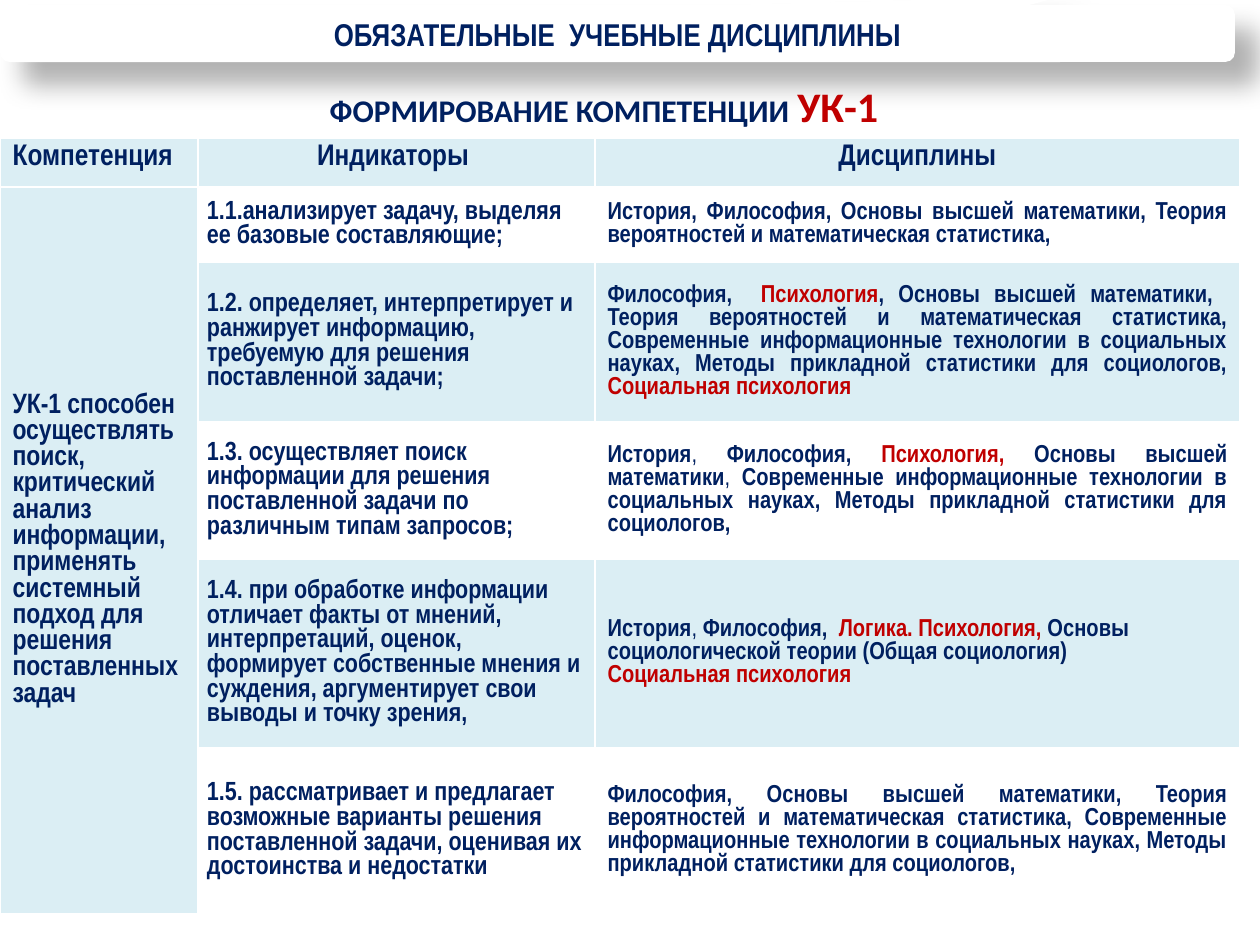
from dataclasses import dataclass

from lxml.etree import SubElement
from pptx import Presentation
from pptx.dml.color import RGBColor
from pptx.enum.shapes import MSO_SHAPE
from pptx.enum.text import MSO_ANCHOR, MSO_AUTO_SIZE, PP_ALIGN
from pptx.oxml.ns import qn
from pptx.util import Emu, Pt

LEFT, CENTER, JUSTIFY = PP_ALIGN.LEFT, PP_ALIGN.CENTER, PP_ALIGN.JUSTIFY


@dataclass(frozen=True)
class Theme:
    navy: str = "002060"
    red: str = "C00000"
    tint: str = "DBEEF4"
    white: str = "FFFFFF"
    black: str = "000000"
    narrow: str = "Arial Narrow"
    sans: str = "Calibri"
    title: int = 18
    space: int = 20
    code: int = 24
    header: int = 17
    competence: int = 16
    indicator: int = 15
    discipline: int = 14


THEME = Theme()
RED = {"color": THEME.red}
PLAIN = {"bold": False}

HEADERS = [("Компетенция", LEFT), ("Индикаторы ", CENTER), ("Дисциплины", CENTER)]
COMPETENCE = ("УК-1 способен осуществлять поиск, критический анализ информации, "
              "применять системный подход для решения поставленных задач")
MATH = "Основы высшей математики"
STATISTICS = "Теория вероятностей и математическая статистика, "
METHODS = ("Современные информационные технологии в социальных науках, "
           "Методы прикладной статистики для социологов, ")
SOCIAL = ("Социальная психология", RED)

# Each row: indicator, then its discipline paragraphs as (alignment, spans).
ROWS = [
    ("1.1.анализирует задачу, выделяя ее базовые составляющие;",
     [(JUSTIFY, [f"История, Философия, {MATH}, {STATISTICS.rstrip()}"])]),
    ("1.2. определяет, интерпретирует и ранжирует информацию, требуемую для решения "
     "поставленной задачи;",
     [(JUSTIFY, ["Философия,  ", ("Психология", RED),
                 f", {MATH},  {STATISTICS}{METHODS}", SOCIAL])]),
    ("1.3. осуществляет поиск информации для решения поставленной задачи по различным "
     "типам запросов; ",
     [(JUSTIFY, ["История", (", ", PLAIN), "Философия, ", ("Психология, ", RED),
                 MATH, (", ", PLAIN), METHODS])]),
    ("1.4. при обработке информации отличает факты от мнений, интерпретаций, оценок, "
     "формирует собственные мнения и суждения, аргументирует свои выводы и точку зрения,",
     [(LEFT, ["История", (", ", PLAIN), "Философия,  ", ("Логика. Психология, ", RED),
              "Основы социологической теории (Общая социология)"]),
      (JUSTIFY, [SOCIAL])]),
    ("1.5. рассматривает и предлагает возможные варианты решения поставленной задачи, "
     "оценивая их достоинства и недостатки",
     [(JUSTIFY, [f"Философия, {MATH}, {STATISTICS}{METHODS}"])]),
]
COLUMN_WIDTHS = [198, 397, 645]
ROW_HEIGHTS = [49, 75, 160, 137, 189, 166]


def px(length):
    return Emu(round(length * 914400 / 126))


def set_all(target, values):
    for name, value in values.items():
        setattr(target, name, value)


def write(frame, paragraphs, size, font=THEME.narrow):
    """Fill a text frame from (alignment, spans); a span is text or (text, changes)."""
    for index, (alignment, spans) in enumerate(paragraphs):
        para = frame.add_paragraph() if index else frame.paragraphs[0]
        para.alignment = alignment
        for part in spans:
            text, changes = (part, {}) if isinstance(part, str) else part
            style = {"size": size, "bold": True, "color": THEME.navy, **changes}
            span = para.add_run()
            span.text = text
            set_all(span.font, {"name": font, "size": Pt(style["size"]),
                                "bold": style["bold"]})
            span.font.color.rgb = RGBColor.from_string(style["color"])


def add_soft_shadow(shape):
    shape.shadow.inherit = False
    effects = shape._element.spPr.find(qn("a:effectLst"))
    shadow = SubElement(effects, qn("a:outerShdw"), blurRad=str(Pt(15)),
                        dist=str(Pt(18)), dir=str(45 * 60000), rotWithShape="0")
    color = SubElement(shadow, qn("a:srgbClr"), val=THEME.black)
    SubElement(color, qn("a:alpha"), val="30000")


def add_banner(page, box):
    banner = page.shapes.add_shape(MSO_SHAPE.ROUNDED_RECTANGULAR_CALLOUT, *map(px, box))
    for index, value in enumerate((0.36, -0.65, 0.17)):
        banner.adjustments[index] = value
    banner.fill.solid()
    banner.fill.fore_color.rgb = RGBColor.from_string(THEME.white)
    banner.line.fill.background()
    add_soft_shadow(banner)
    set_all(banner.text_frame, {"word_wrap": True, "vertical_anchor": MSO_ANCHOR.MIDDLE,
                                "auto_size": MSO_AUTO_SIZE.SHAPE_TO_FIT_TEXT})
    write(banner.text_frame, [(CENTER, ["ОБЯЗАТЕЛЬНЫЕ  УЧЕБНЫЕ ДИСЦИПЛИНЫ"])], THEME.title)


def add_heading(page, box):
    frame = page.shapes.add_textbox(*map(px, box)).text_frame
    set_all(frame, {"word_wrap": True, "auto_size": MSO_AUTO_SIZE.SHAPE_TO_FIT_TEXT})
    spans = ["ФОРМИРОВАНИЕ КОМПЕТЕНЦИИ", (" ", {"size": THEME.space}),
             ("УК-1", {"size": THEME.code, **RED})]
    write(frame, [(CENTER, spans)], THEME.title, THEME.sans)


def fill_cell(cell, color, paragraphs, size, **layout):
    cell.fill.solid()
    cell.fill.fore_color.rgb = RGBColor.from_string(color)
    set_all(cell, layout)
    write(cell.text_frame, paragraphs, size)


def add_competence_table(page, left, top):
    table = page.shapes.add_table(
        len(ROW_HEIGHTS), len(COLUMN_WIDTHS), px(left), px(top),
        px(sum(COLUMN_WIDTHS)), px(sum(ROW_HEIGHTS))).table
    set_all(table, {"first_row": False, "horz_banding": False})
    for column, width in zip(table.columns, COLUMN_WIDTHS):
        column.width = px(width)
    for row, height in zip(table.rows, ROW_HEIGHTS):
        row.height = px(height)

    for index, (text, alignment) in enumerate(HEADERS):
        fill_cell(table.cell(0, index), THEME.tint, [(alignment, [text])], THEME.header)

    middle = {"vertical_anchor": MSO_ANCHOR.MIDDLE}
    tight = {"margin_left": px(9), "margin_right": px(9),
             "margin_top": 0, "margin_bottom": 0}
    table.cell(1, 0).merge(table.cell(len(ROWS), 0))
    fill_cell(table.cell(1, 0), THEME.tint, [(LEFT, [COMPETENCE])],
              THEME.competence, **middle)
    for index, (indicator, disciplines) in enumerate(ROWS, 1):
        color = THEME.white if index % 2 else THEME.tint
        fill_cell(table.cell(index, 1), color, [(LEFT, [indicator])],
                  THEME.indicator, **middle, **tight)
        fill_cell(table.cell(index, 2), color, disciplines, THEME.discipline, **middle)


def main():
    deck = Presentation()
    set_all(deck, {"slide_width": px(1260), "slide_height": px(945)})
    page = deck.slides.add_slide(deck.slide_layouts[6])
    add_banner(page, (0, 5, 1235, 57))
    add_heading(page, (0, 74, 1208, 63))
    add_competence_table(page, 0, 138)
    deck.save("out.pptx")


if __name__ == "__main__":
    main()
